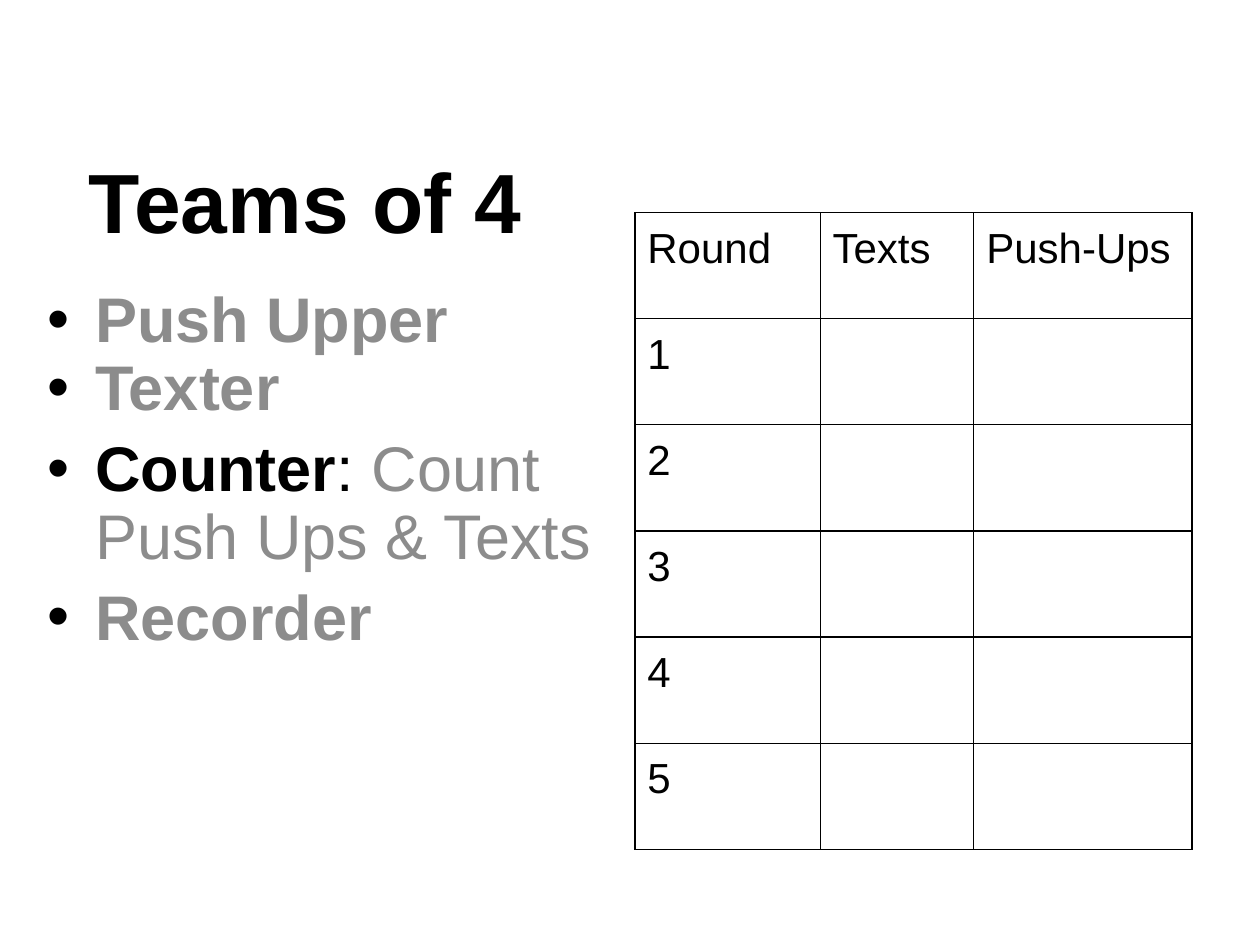
from lxml import etree
from pptx import Presentation
from pptx import util as u
from pptx.dml import color
from pptx.enum import text
from pptx.oxml import ns

COLOURS = {"ink": "000000", "muted": "8C8C8C"}
FONT = "Arial"
ROLES = [
    (0, [("Push Upper", "muted", True)]),
    (0, [("Texter", "muted", True)]),
    (7.2, [("Counter", "ink", True), (": ", "ink", False),
           ("Count Push Ups & Texts", "muted", False)]),
    (7.2, [("Recorder", "muted", True)]),
]
HEADINGS = ["Round", "Texts", "Push-Ups"]
ROUNDS = 5
COLUMN_SHARES = [1.47, 1.22, 1.73]


def add_span(para, words, size, colour="ink", bold=False):
    """Add one formatted run to a paragraph."""
    span = para.add_run()
    span.text = words
    span.font.name = FONT
    span.font.size = u.Pt(size)
    span.font.bold = bold
    span.font.color.rgb = color.RGBColor.from_string(COLOURS[colour])


def add_box(page, left, top, width, height, anchor):
    """Add a wrapping text box and return its text frame."""
    box = page.shapes.add_textbox(u.Cm(left), u.Cm(top), u.Cm(width), u.Cm(height))
    frame = box.text_frame
    frame.word_wrap = True
    frame.vertical_anchor = anchor
    return frame


def add_bullet(para, indent):
    """Give a paragraph a hanging black bullet."""
    props = para._p.get_or_add_pPr()
    props.set("marL", str(u.Cm(indent)))
    props.set("indent", str(-u.Cm(indent)))
    tint = etree.SubElement(props, ns.qn("a:buClr"))
    etree.SubElement(tint, ns.qn("a:srgbClr"), val=COLOURS["ink"])
    etree.SubElement(props, ns.qn("a:buFont"), typeface=FONT)
    etree.SubElement(props, ns.qn("a:buChar"), char="•")


def add_title(page, left, top, width, height):
    """Place the centred heading."""
    frame = add_box(page, left, top, width, height, text.MSO_ANCHOR.MIDDLE)
    para = frame.paragraphs[0]
    para.alignment = text.PP_ALIGN.CENTER
    para.line_spacing = 0.9
    add_span(para, "Teams of 4", 48, bold=True)


def add_roles(page, left, top, width, height):
    """Place the bulleted list of team roles."""
    frame = add_box(page, left, top, width, height, text.MSO_ANCHOR.TOP)
    for index, (gap, spans) in enumerate(ROLES):
        para = frame.add_paragraph() if index else frame.paragraphs[0]
        add_bullet(para, 0.96)
        para.line_spacing = 0.9
        para.space_before = u.Pt(gap)
        for words, colour, bold in spans:
            add_span(para, words, 36, colour, bold)


def style_cell(cell):
    """Clear the fill of a cell, pad it and draw its four borders."""
    cell.margin_left = cell.margin_right = u.Cm(0.25)
    cell.margin_top = cell.margin_bottom = u.Cm(0.25)
    props = cell._tc.get_or_add_tcPr()
    for side in ("a:lnL", "a:lnR", "a:lnT", "a:lnB"):
        line = etree.SubElement(props, ns.qn(side), w=str(u.Pt(0.75)))
        fill = etree.SubElement(line, ns.qn("a:solidFill"))
        etree.SubElement(fill, ns.qn("a:srgbClr"), val=COLOURS["ink"])
    cell.fill.background()


def add_score_table(page, left, top, width, height):
    """Place the score sheet with one row for each round."""
    rows = [HEADINGS] + [[str(n + 1), "", ""] for n in range(ROUNDS)]
    table = page.shapes.add_table(len(rows), len(HEADINGS), u.Cm(left), u.Cm(top),
                                  u.Cm(width), u.Cm(height)).table
    table.first_row = table.horz_banding = False
    for column, share in zip(table.columns, COLUMN_SHARES):
        column.width = u.Cm(width * share / sum(COLUMN_SHARES))
    for r, row in enumerate(rows):
        for c, words in enumerate(row):
            cell = table.cell(r, c)
            style_cell(cell)
            if words:
                add_span(cell.text_frame.paragraphs[0], words, 24)


def main():
    """Build the slide and save the deck."""
    deck = Presentation()
    deck.slide_width, deck.slide_height = u.Cm(25.4), u.Cm(19.05)
    page = deck.slides.add_slide(deck.slide_layouts[6])
    add_title(page, -0.46, 2.31, 13.23, 3.68)
    add_roles(page, 0.71, 5.69, 12.55, 12.09)
    add_score_table(page, 12.8, 4.29, 11.23, 12.83)
    deck.save("out.pptx")


if __name__ == "__main__":
    main()
